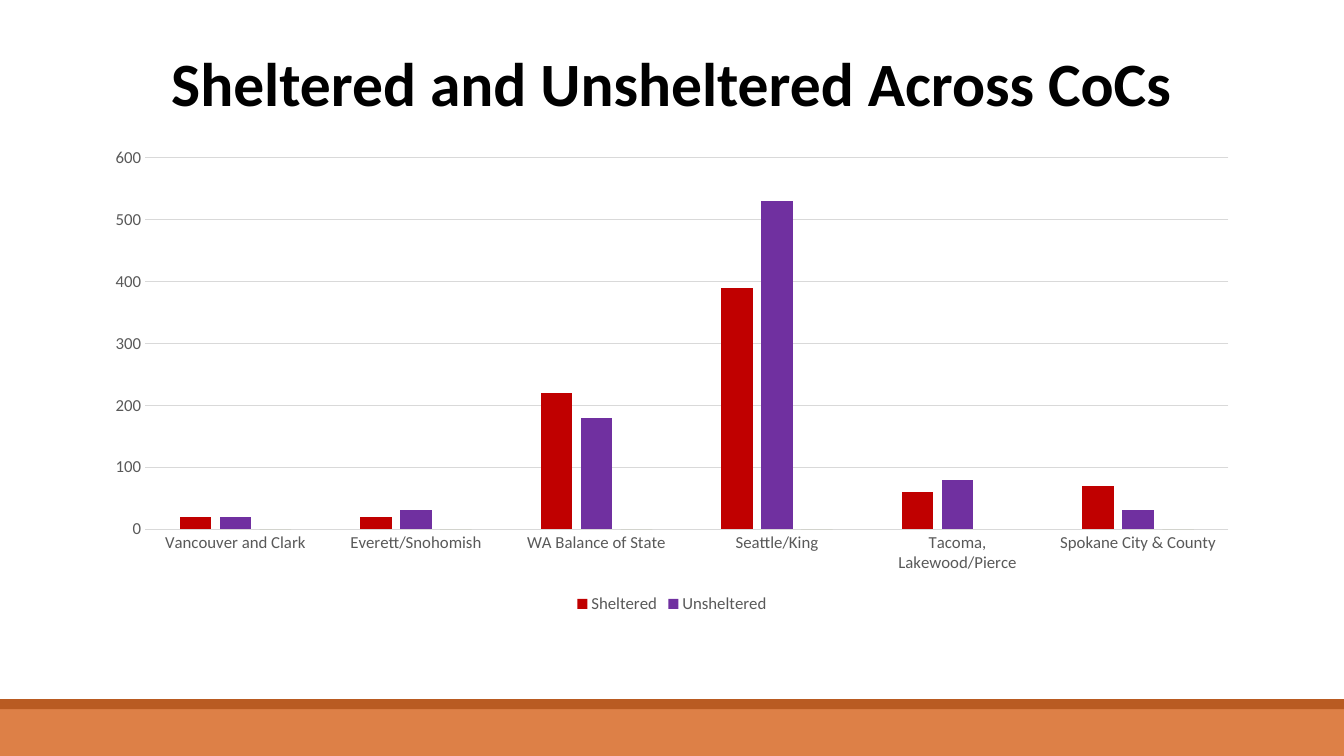
from lxml import etree
from pptx import Presentation
from pptx.chart.data import CategoryChartData
from pptx.dml.color import RGBColor
from pptx.enum.chart import XL_CHART_TYPE, XL_LEGEND_POSITION, XL_TICK_MARK
from pptx.enum.shapes import MSO_SHAPE
from pptx.enum.text import MSO_ANCHOR, PP_ALIGN
from pptx.oxml.ns import qn
from pptx.util import Cm, Pt

FONT = "Calibri"
COLORS = {
    "title": "000000",
    "label": "595959",
    "grid": "D9D9D9",
    "band": "DD8047",
    "stripe": "B95B22",
    "Sheltered": "C00000",
    "Unsheltered": "7030A0",
    "Series 3": "A5AB81",
}


def color(name):
    return RGBColor.from_string(COLORS[name])


def style_font(font, size, color_name, bold=False):
    font.name = FONT
    font.size = Pt(size)
    font.bold = bold
    font.color.rgb = color(color_name)


deck = Presentation()
deck.slide_width, deck.slide_height = Cm(33.87), Cm(19.05)
page = deck.slides.add_slide(deck.slide_layouts[6])

# Footer band with its darker stripe
for name, top, height in [("band", 17.85, 1.2), ("stripe", 17.62, 0.25)]:
    bar = page.shapes.add_shape(
        MSO_SHAPE.RECTANGLE, Cm(0), Cm(top), deck.slide_width, Cm(height))
    bar.shadow.inherit = False
    bar.fill.solid()
    bar.fill.fore_color.rgb = color(name)
    bar.line.fill.background()

# Title
title_box = page.shapes.add_textbox(Cm(2.33), Cm(0.33), Cm(29.21), Cm(3.68))
title_box.text_frame.word_wrap = True
title_box.text_frame.vertical_anchor = MSO_ANCHOR.MIDDLE
para = title_box.text_frame.paragraphs[0]
para.text = "Sheltered and Unsheltered Across CoCs"
para.alignment = PP_ALIGN.CENTER
para.line_spacing = 0.9
style_font(para.font, 44, "title", bold=True)

# Chart data
chart_data = CategoryChartData()
chart_data.categories = [
    "Vancouver and Clark", "Everett/Snohomish", "WA Balance of State",
    "Seattle/King", "Tacoma, Lakewood/Pierce", "Spokane City & County",
]
chart_data.add_series("Sheltered", [20, 20, 220, 390, 60, 70])
chart_data.add_series("Unsheltered", [20, 30, 180, 530, 80, 30])
chart_data.add_series("Series 3", [0, 0, 0, 0, None, 0])

# Clustered columns
chart = page.shapes.add_chart(
    XL_CHART_TYPE.COLUMN_CLUSTERED, Cm(2.33), Cm(3.48), Cm(29.21), Cm(12.09),
    chart_data).chart
chart.has_title = False
style_font(chart.font, 10, "title")
plot = chart.plots[0]
plot.gap_width = 219
plot.overlap = -27
plot.vary_by_categories = False
for series in plot.series:
    series.format.fill.solid()
    series.format.fill.fore_color.rgb = color(series.name)

# Axes
for axis in (chart.category_axis, chart.value_axis):
    axis.major_tick_mark = axis.minor_tick_mark = XL_TICK_MARK.NONE
    style_font(axis.tick_labels.font, 12, "label")
chart.value_axis.minimum_scale = 0
chart.value_axis.maximum_scale = 600
chart.value_axis.major_unit = 100
chart.value_axis.format.line.fill.background()
for line in (chart.category_axis.format.line,
             chart.value_axis.major_gridlines.format.line):
    line.color.rgb = color("grid")
    line.width = Pt(0.75)

# Legend without the third series
chart.has_legend = True
legend = chart.legend
legend.position = XL_LEGEND_POSITION.BOTTOM
legend.include_in_layout = False
style_font(legend.font, 12, "label")
entry = etree.Element(qn("c:legendEntry"))
etree.SubElement(entry, qn("c:idx")).set("val", "2")
etree.SubElement(entry, qn("c:delete")).set("val", "1")
legend._element.find(qn("c:legendPos")).addnext(entry)

deck.save("out.pptx")
